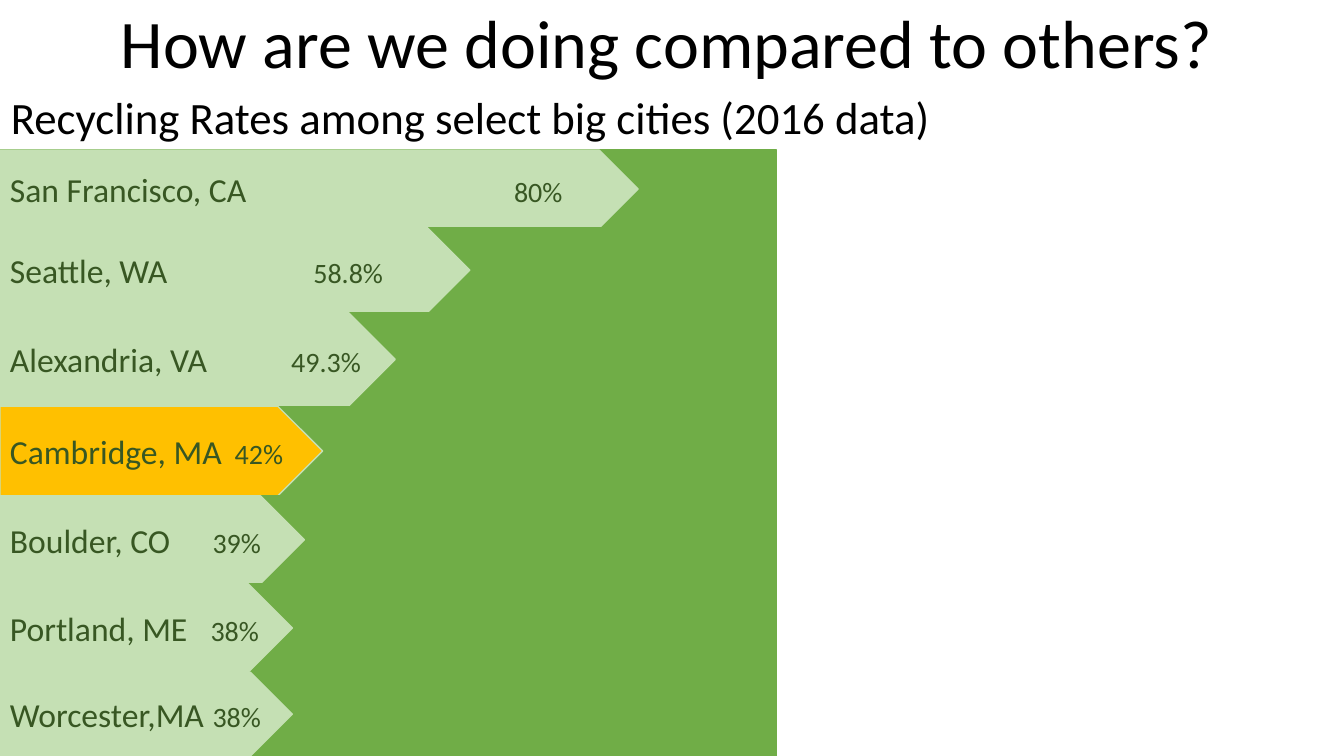
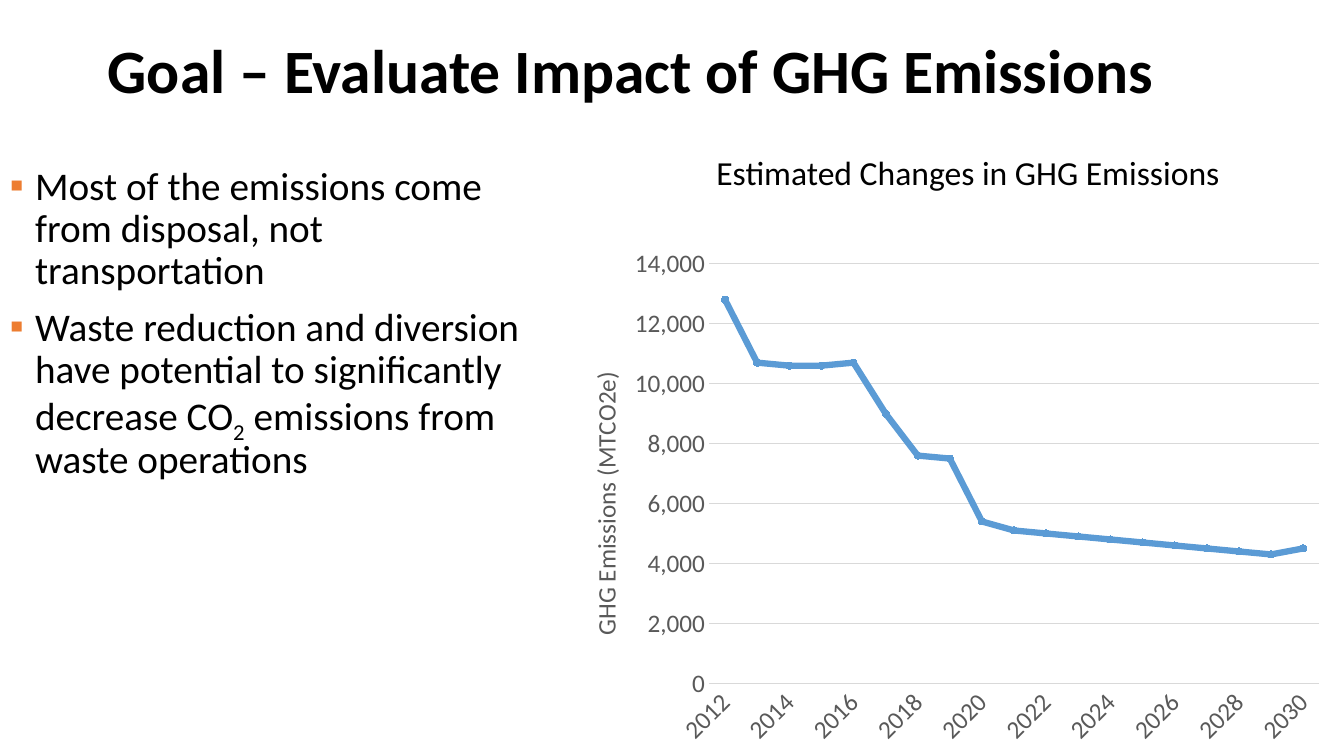
import pptx
import pptx.chart.data
import pptx.dml.color
import pptx.enum.chart
import pptx.enum.shapes
import pptx.enum.text
import pptx.oxml
import pptx.oxml.ns
import pptx.util

FONT = "Calibri"
BLACK, GREY, RULE = "000000", "595959", "D9D9D9"
GREEN, PALE, DARK, GOLD = "70AD47", "C5E0B4", "385723", "FFC000"
BLUE, ORANGE = "5B9BD5", "ED7D31"
WIDTH, HEIGHT = 13.33, 7.5
Inches, Pt = pptx.util.Inches, pptx.util.Pt
Align, Anchor = pptx.enum.text.PP_ALIGN, pptx.enum.text.MSO_ANCHOR
Shape = pptx.enum.shapes.MSO_SHAPE
DRAWING = pptx.oxml.ns.nsdecls("a")


def rgb(code):
    return pptx.dml.color.RGBColor.from_string(code)


def write(para, text, size=28, color=BLACK, bold=False, baseline=0,
          align=Align.LEFT, spacing=1.0):
    para.alignment = align
    para.line_spacing = spacing
    span = para.add_run()
    span.text = text
    font = span.font
    font.name, font.size, font.bold = FONT, Pt(size), bold
    font.color.rgb = rgb(color)
    if baseline:
        font._element.set("baseline", str(baseline * 1000))


deck = pptx.Presentation()
deck.slide_width, deck.slide_height = Inches(WIDTH), Inches(HEIGHT)
cities_page, emissions_page = [deck.slides.add_slide(deck.slide_layouts[6]) for _ in range(2)]

# Titles and subheadings of both slides
title = dict(spacing=0.9)
headings = [
    (cities_page, (0, 0.02, 13.22, 0.89), Anchor.MIDDLE, "How are we doing compared to others?",
     dict(title, size=48.6, align=Align.CENTER)),
    (cities_page, (0.01, 0.84, 12.36, 0.64), Anchor.TOP,
     "Recycling Rates among select big cities (2016 data)", dict(size=32)),
    (emissions_page, (0.97, 0, 11.5, 1.45), Anchor.MIDDLE,
     "Goal – Evaluate Impact of GHG Emissions", dict(title, size=44, bold=True)),
    (emissions_page, (5.86, 1.46, 7.48, 0.5), Anchor.TOP, "Estimated Changes in GHG Emissions",
     dict(size=24, align=Align.CENTER)),
]
for page, place, anchor, text, style in headings:
    frame = page.shapes.add_textbox(*map(Inches, place)).text_frame
    frame.word_wrap, frame.vertical_anchor = True, anchor
    write(frame.paragraphs[0], text, **style)

# City bars: name, rate, arrow tip, position of the rate
TRACK = 7.7
row_edges = [1.49, 2.26, 3.1, 4.03, 4.92, 5.79, 6.67, HEIGHT]
cities = [
    ("San Francisco, CA", "80%", 6.33, 5.1),
    ("Seattle, WA", "58.8%", 4.66, 3.11),
    ("Alexandria, VA", "49.3%", 3.92, 2.89),
    ("Cambridge, MA", "42%", 3.2, 2.33),
    ("Boulder, CO", "39%", 3.02, 2.11),
    ("Portland, ME", "38%", 2.9, 2.09),
    ("Worcester,MA", "38%", 2.9, 2.11),
]
for (city, rate, tip, rate_left), top, bottom in zip(cities, row_edges, row_edges[1:]):
    arrow_fill = GOLD if city.startswith("Cambridge") else PALE
    for kind, width, fill, line in ((Shape.RECTANGLE, TRACK, GREEN, GREEN),
                                    (Shape.PENTAGON, tip, arrow_fill, PALE)):
        bar = cities_page.shapes.add_shape(
            kind, 0, Inches(top), Inches(width), Inches(bottom - top))
        bar.shadow.inherit = False
        bar.fill.solid()
        bar.fill.fore_color.rgb = rgb(fill)
        bar.line.color.rgb = rgb(line)
        bar.line.width = Pt(1)
    bar.text_frame.vertical_anchor = Anchor.MIDDLE
    para = bar.text_frame.paragraphs[0]
    write(para, city + "\t", size=24, color=DARK)
    write(para, rate, size=20, color=DARK)
    para._p.get_or_add_pPr().append(pptx.oxml.parse_xml(
        f'<a:tabLst {DRAWING}><a:tab pos="{Inches(rate_left - 0.1)}" algn="l"/></a:tabLst>'))

# Bullets
points = [
    [("Most of the emissions come from disposal, not transportation", 0)],
    [("Waste reduction and diversion have potential to significantly decrease CO", 0),
     ("2", -25), (" emissions from waste operations", 0)],
]
frame = emissions_page.shapes.add_textbox(
    0, Inches(1.6), Inches(5.29), Inches(HEIGHT - 1.6)).text_frame
frame.word_wrap = True
for number, spans in enumerate(points):
    para = frame.add_paragraph() if number else frame.paragraphs[0]
    for text, baseline in spans:
        write(para, text, baseline=baseline, spacing=0.9)
    para.space_before = Pt(10)
    settings = para._p.get_or_add_pPr()
    settings.set("marL", str(Inches(0.25)))
    settings.set("indent", str(-Inches(0.25)))
    for bullet in (f'<a:buClr {DRAWING}><a:srgbClr val="{ORANGE}"/></a:buClr>',
                   f'<a:buFont {DRAWING} typeface="Wingdings"/>'.replace("Wingdings", FONT),
                   f'<a:buChar {DRAWING} char="▪"/>'):
        settings.append(pptx.oxml.parse_xml(bullet))

# Emissions chart
data = pptx.chart.data.CategoryChartData(number_format="#,##0")
data.categories = [str(year) for year in range(2012, 2031)]
data.add_series("Series 1", [
    12800, 10700, 10600, 10600, 10700, 9000, 7600, 7500, 5400, 5100,
    5000, 4900, 4800, 4700, 4600, 4500, 4400, 4300, 4500])
chart = emissions_page.shapes.add_chart(
    pptx.enum.chart.XL_CHART_TYPE.LINE_MARKERS,
    Inches(5.48), Inches(2.36), Inches(7.76), Inches(5.14), data).chart
chart.has_legend = chart.has_title = False
chart.font.name, chart.font.size = FONT, Pt(18)
chart.font.color.rgb = rgb(GREY)
chart.plots[0].vary_by_categories = False

series = chart.plots[0].series[0]
series.smooth = False
series.format.line.color.rgb = rgb(BLUE)
series.format.line.width = Pt(4.5)
series.marker.style = pptx.enum.chart.XL_MARKER_STYLE.CIRCLE
series.marker.size = 5
series.marker.format.fill.solid()
series.marker.format.fill.fore_color.rgb = rgb(BLUE)
series.marker.format.line.color.rgb = rgb(BLUE)

years, amounts = chart.category_axis, chart.value_axis
for axis in (years, amounts):
    axis.major_tick_mark = axis.minor_tick_mark = pptx.enum.chart.XL_TICK_MARK.NONE
    axis.tick_labels.font.size = Pt(18)
    axis.tick_labels.font.color.rgb = rgb(GREY)
amounts.minimum_scale, amounts.maximum_scale, amounts.major_unit = 0, 14000, 2000
amounts.tick_labels.number_format = "#,##0"
amounts.tick_labels.number_format_is_linked = False
amounts.format.line.fill.background()
for line in (years.format.line, amounts.major_gridlines.format.line):
    line.color.rgb = rgb(RULE)
    line.width = Pt(0.75)
write(amounts.axis_title.text_frame.paragraphs[0], "GHG Emissions (MTCO2e)",
      size=18, color=GREY)

# Slanted labels for every second year
years._element.find(pptx.oxml.ns.qn("c:txPr")).find(
    pptx.oxml.ns.qn("a:bodyPr")).set("rot", str(-45 * 60000))
skip = pptx.oxml.parse_xml(f'<c:tickLblSkip {pptx.oxml.ns.nsdecls("c")} val="2"/>')
years._element.find(pptx.oxml.ns.qn("c:noMultiLvlLbl")).addprevious(skip)

# Places of the plot area and the axis title, as shares of the chart
plot_area = chart._chartSpace.chart.plotArea
axis_title = amounts.axis_title._element
for owner, target, shares in (
        (plot_area, '<c:layoutTarget val="inner"/>', dict(x=0.2, y=0.05, w=0.78, h=0.81)),
        (axis_title, "", dict(x=0.04, y=0.25))):
    modes = "".join(f'<c:{side}Mode val="edge"/>' for side in "xy")
    values = "".join(f'<c:{side} val="{share}"/>' for side, share in shares.items())
    layout = pptx.oxml.parse_xml(
        f'<c:layout {pptx.oxml.ns.nsdecls("c")}><c:manualLayout>'
        f'{target}{modes}{values}</c:manualLayout></c:layout>')
    for former in owner.findall(pptx.oxml.ns.qn("c:layout")):
        owner.remove(former)
    owner.insert(0 if owner is plot_area else 1, layout)

deck.save("out.pptx")
